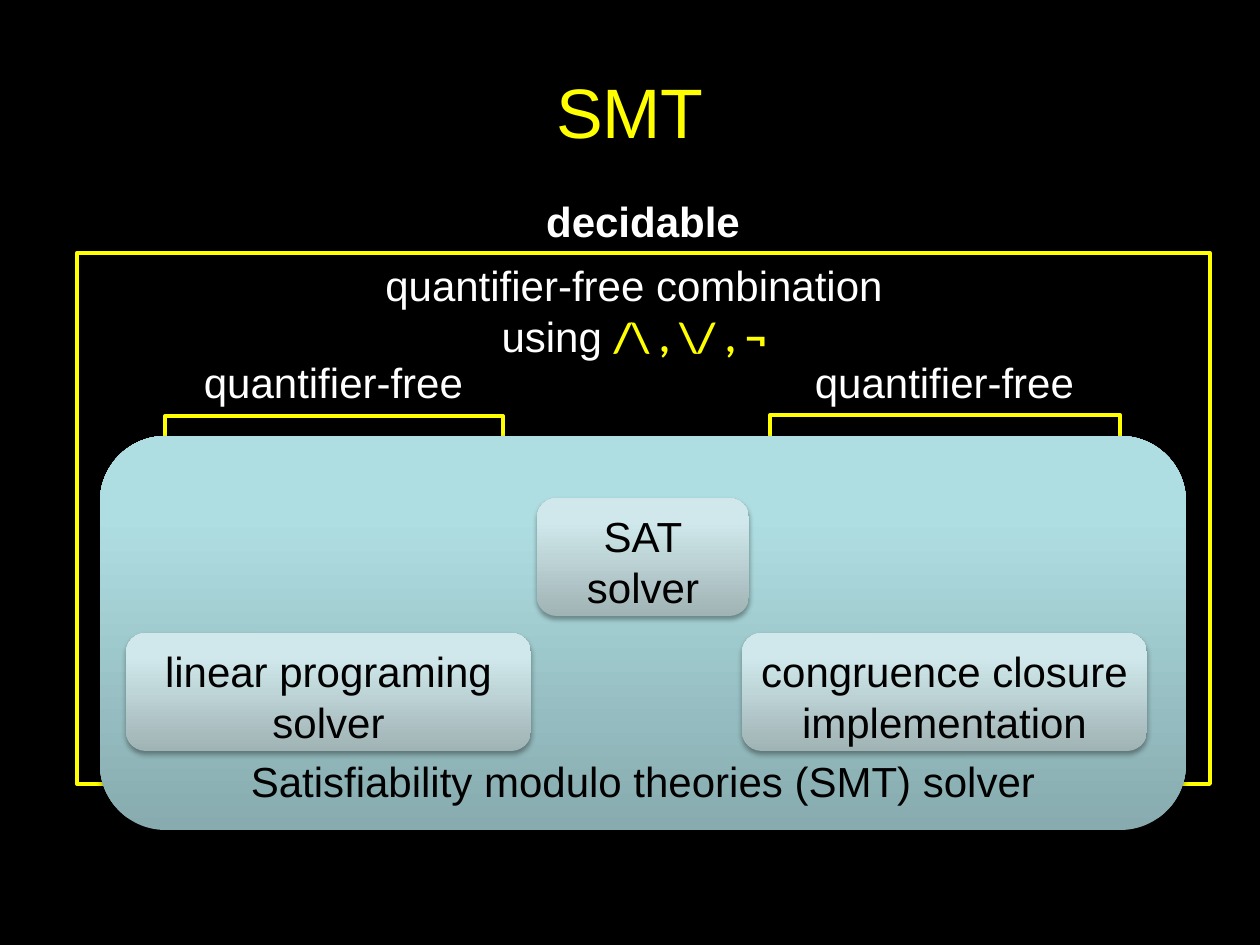
from copy import deepcopy

from lxml.etree import SubElement
from pptx import Presentation
from pptx.dml.color import RGBColor
from pptx.enum.shapes import MSO_SHAPE
from pptx.enum.text import MSO_ANCHOR, PP_ALIGN
from pptx.oxml.ns import qn
from pptx.util import Emu, Pt

PX_PER_INCH = 126
COLORS = {
    "background": "000000",
    "accent": "FFFF00",
    "label": "FFFFFF",
    "box_text": "000000",
    "shadow": "000000",
}
PANEL_GRADIENT = [(0, "87ABAE"), (0.8, "AFDEE2"), (1, "AFE0E4")]
SOLVER_GRADIENT = [(0, "A0B3B5"), (0.8, "D0E8EB"), (1, "D1EAEC")]


def px(length):
    return Emu(round(length * 914400 / PX_PER_INCH))


def rgb(name):
    return RGBColor.from_string(COLORS[name])


def write(frame, text, color, size=24, bold=False):
    paragraph = frame.paragraphs[0]
    paragraph.text = text
    paragraph.alignment = PP_ALIGN.CENTER
    paragraph.line_spacing = Pt(size * 1.21)
    paragraph.font.name = "Arial"
    paragraph.font.size = Pt(size)
    paragraph.font.bold = bold
    paragraph.font.color.rgb = rgb(color)
    return paragraph


def add_label(slide, box, text, color="label", **font):
    label = slide.shapes.add_textbox(*map(px, box))
    label.text_frame.word_wrap = False
    return write(label.text_frame, text, color, **font)


def add_frame(slide, box):
    frame = slide.shapes.add_shape(MSO_SHAPE.RECTANGLE, *map(px, box))
    frame.shadow.inherit = False
    frame.fill.background()
    frame.line.color.rgb = rgb("accent")
    frame.line.width = Pt(2.25)


def fill_gradient(shape, colors):
    shape.fill.gradient()
    shape.fill.gradient_angle = 90
    stop_list = shape._element.spPr.find(".//" + qn("a:gsLst"))
    stop_list.insert(1, deepcopy(stop_list[0]))
    for stop, (position, color) in zip(shape.fill.gradient_stops, colors):
        stop.position = position
        stop.color.rgb = RGBColor.from_string(color)


def add_soft_shadow(shape):
    shape.shadow.inherit = False
    effects = shape._element.spPr.find(qn("a:effectLst"))
    shadow = SubElement(effects, qn("a:outerShdw"), blurRad=str(Pt(3.1)),
                        dist=str(Pt(1.8)), dir="5400000", rotWithShape="0")
    color = SubElement(shadow, qn("a:srgbClr"), val=COLORS["shadow"])
    SubElement(color, qn("a:alpha"), val="35000")


def add_rounded_box(slide, box, text, gradient, anchor=MSO_ANCHOR.TOP):
    rounded = slide.shapes.add_shape(MSO_SHAPE.ROUNDED_RECTANGLE, *map(px, box))
    rounded.line.fill.background()
    fill_gradient(rounded, gradient)
    add_soft_shadow(rounded)
    frame = rounded.text_frame
    frame.word_wrap = True
    frame.vertical_anchor = anchor
    frame.margin_left = frame.margin_right = px(6)
    frame.margin_bottom = px(5)
    write(frame, text, "box_text")


def main():
    prs = Presentation()
    prs.slide_width, prs.slide_height = px(1260), px(945)
    slide = prs.slides.add_slide(prs.slide_layouts[6])
    slide.background.fill.solid()
    slide.background.fill.fore_color.rgb = rgb("background")

    # Frames around the two theories and their combination
    for box in [(165, 416, 338, 122), (770, 415, 350, 122), (77, 253, 1133, 531)]:
        add_frame(slide, box)

    # Title
    add_label(slide, (63, 62, 1134, 84), "SMT", "accent", size=40)

    # SMT solver panel
    add_rounded_box(slide, (100, 436, 1086, 394),
                    "Satisfiability modulo theories (SMT) solver",
                    PANEL_GRADIENT, MSO_ANCHOR.BOTTOM)

    # Labels of the frames
    for left in (190, 801):
        add_label(slide, (left, 350, 287, 63), "quantifier-free")
    combination = add_label(slide, (370, 253, 528, 115),
                            "quantifier-free combination\nusing ")
    connectives = combination.add_run()
    connectives.text = "/\\ , \\/ , ¬"
    connectives.font.name = "Calibri"
    connectives.font.bold = True
    connectives.font.color.rgb = rgb("accent")
    add_label(slide, (533, 189, 220, 63), "decidable", bold=True)

    # Component solvers
    for box, text in [
        ((126, 633, 405, 118), "linear programing solver"),
        ((742, 633, 405, 118), "congruence closure\nimplementation"),
        ((537, 498, 212, 118), "SAT\nsolver"),
    ]:
        add_rounded_box(slide, box, text, SOLVER_GRADIENT)

    prs.save("out.pptx")


if __name__ == "__main__":
    main()
